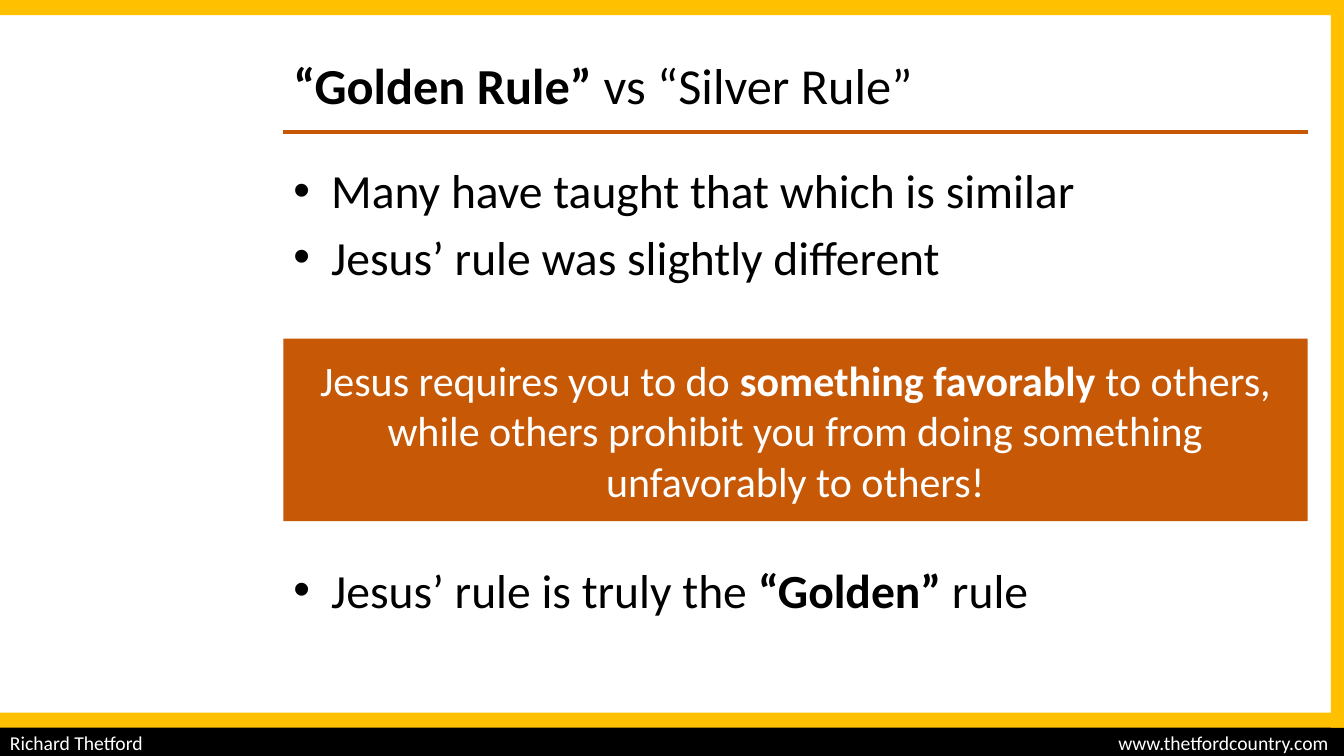
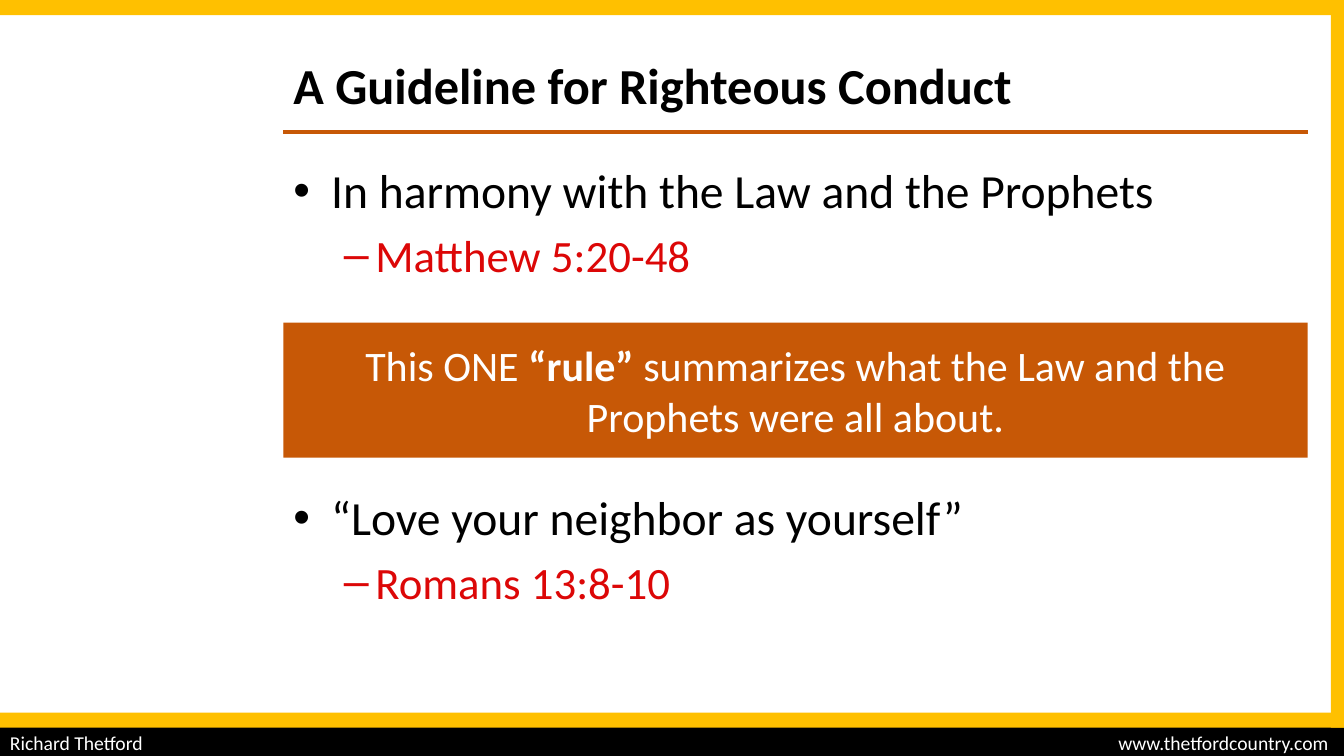
from dataclasses import dataclass

from lxml.etree import SubElement
from pptx import Presentation
from pptx.dml.color import RGBColor
from pptx.enum.shapes import MSO_CONNECTOR, MSO_SHAPE
from pptx.enum.text import MSO_ANCHOR, MSO_AUTO_SIZE, PP_ALIGN
from pptx.oxml.ns import qn
from pptx.shapes.autoshape import Shape
from pptx.slide import Slide, SlideLayout
from pptx.util import Inches, Pt

BLACK = RGBColor(0x00, 0x00, 0x00)
WHITE = RGBColor(0xFF, 0xFF, 0xFF)
GOLD = RGBColor(0xFF, 0xC0, 0x00)
ORANGE = RGBColor(0xC7, 0x58, 0x06)
RED = RGBColor(0xDC, 0x07, 0x07)
FONT = "Calibri"

SLIDE_WIDTH, SLIDE_HEIGHT = 13.33, 7.5
CONTENT_LEFT, CONTENT_WIDTH = 2.81, 10.16
RULE_TOP = 1.31
BAND = 0.15
SIDE_BAND = 0.13
FOOTER_TOP = 7.19
BOTTOM_BAND_TOP = 7.07


@dataclass(frozen=True)
class TextRun:
    text: str
    bold: bool = False


@dataclass(frozen=True)
class Point:
    runs: list[TextRun]
    level: int = 0
    space_before: float | None = None


@dataclass(frozen=True)
class Callout:
    top: float
    height: float
    runs: list[TextRun]


@dataclass(frozen=True)
class Page:
    title: list[TextRun]
    points: list[Point]
    callout: Callout


PAGES = [
    Page(
        title=[TextRun("“Golden Rule”", bold=True), TextRun(" vs “Silver Rule”")],
        points=[
            Point([TextRun("Many have taught that which is similar")], space_before=0),
            Point([TextRun("Jesus’ rule was slightly different")]),
            Point(
                [
                    TextRun("Jesus’ rule is truly the "),
                    TextRun("“Golden” ", bold=True),
                    TextRun("rule"),
                ],
                space_before=197,
            ),
        ],
        callout=Callout(
            3.36,
            1.81,
            [
                TextRun("Jesus requires you to do "),
                TextRun("something favorably ", bold=True),
                TextRun(
                    "to others, while others prohibit you from doing "
                    "something unfavorably to others!"
                ),
            ],
        ),
    ),
    Page(
        title=[TextRun("A Guideline for Righteous Conduct", bold=True)],
        points=[
            Point([TextRun("In harmony with the Law and the Prophets")], space_before=0),
            Point([TextRun("Matthew 5:20-48")], level=1),
            Point([TextRun("“Love your neighbor as yourself”")], space_before=148),
            Point([TextRun("Romans 13:8-10")], level=1),
        ],
        callout=Callout(
            3.2,
            1.34,
            [
                TextRun("This ONE "),
                TextRun("“rule” ", bold=True),
                TextRun("summarizes what the Law and the Prophets were all about."),
            ],
        ),
    ),
]


def write_runs(
    paragraph,
    runs: list[TextRun],
    *,
    size: float,
    color: RGBColor = BLACK,
    align: PP_ALIGN = PP_ALIGN.LEFT,
) -> None:
    paragraph.alignment = align
    for text_run in runs:
        run = paragraph.add_run()
        run.text = text_run.text
        run.font.name = FONT
        run.font.size = Pt(size)
        run.font.bold = text_run.bold
        run.font.color.rgb = color


def add_box(
    slide: Slide, left: float, top: float, width: float, height: float, fill: RGBColor
) -> Shape:
    box = slide.shapes.add_shape(
        MSO_SHAPE.RECTANGLE, Inches(left), Inches(top), Inches(width), Inches(height)
    )
    box.shadow.inherit = False
    box.fill.solid()
    box.fill.fore_color.rgb = fill
    box.line.fill.background()
    box.text_frame.vertical_anchor = MSO_ANCHOR.MIDDLE
    return box


def add_footer(slide: Slide) -> None:
    footer = add_box(
        slide, 0, FOOTER_TOP, SLIDE_WIDTH, SLIDE_HEIGHT - FOOTER_TOP, BLACK
    )
    footer.text_frame.margin_bottom = 0
    paragraph = footer.text_frame.paragraphs[0]
    tab_list = SubElement(paragraph._p.get_or_add_pPr(), qn("a:tabLst"))
    SubElement(tab_list, qn("a:tab"), pos=str(Inches(13.08)), algn="r")
    write_runs(
        paragraph,
        [TextRun("Richard Thetford\twww.thetfordcountry.com")],
        size=14,
        color=WHITE,
    )


def add_frame(slide: Slide) -> None:
    """Draw the gold bands, the footer and the rule under the title."""
    add_footer(slide)
    for top in (0, BOTTOM_BAND_TOP):
        add_box(slide, 0, top, SLIDE_WIDTH, BAND, GOLD)
    add_box(slide, SLIDE_WIDTH - SIDE_BAND, 0, SIDE_BAND, BOTTOM_BAND_TOP + BAND, GOLD)
    rule = slide.shapes.add_connector(
        MSO_CONNECTOR.STRAIGHT,
        Inches(CONTENT_LEFT),
        Inches(RULE_TOP),
        Inches(CONTENT_LEFT + CONTENT_WIDTH),
        Inches(RULE_TOP),
    )
    rule.line.color.rgb = ORANGE
    rule.line.width = Pt(3)
    SubElement(rule._element.spPr, qn("a:effectLst"))


def place_layout(layout: SlideLayout) -> None:
    """Set the title and body areas that every slide inherits."""
    areas = [(0.21, 10.24, 1.26), (1.55, CONTENT_WIDTH, 5.58)]
    for index, (top, width, height) in enumerate(areas):
        placeholder = layout.placeholders[index]
        placeholder.left, placeholder.top = Inches(CONTENT_LEFT), Inches(top)
        placeholder.width, placeholder.height = Inches(width), Inches(height)


def add_page(presentation, layout: SlideLayout, page: Page) -> None:
    slide = presentation.slides.add_slide(layout)
    title_frame = slide.shapes.title.text_frame
    title_frame.auto_size = MSO_AUTO_SIZE.NONE
    title_frame.vertical_anchor = MSO_ANCHOR.MIDDLE
    write_runs(title_frame.paragraphs[0], page.title, size=36)

    body_frame = slide.placeholders[1].text_frame
    body_frame.auto_size = MSO_AUTO_SIZE.NONE
    for index, point in enumerate(page.points):
        paragraph = body_frame.add_paragraph() if index else body_frame.paragraphs[0]
        paragraph.level = point.level
        if point.space_before is not None:
            paragraph.space_before = Pt(point.space_before)
        size, color = (32, RED) if point.level else (34, BLACK)
        write_runs(paragraph, point.runs, size=size, color=color)

    add_frame(slide)
    callout = page.callout
    box = add_box(
        slide, CONTENT_LEFT, callout.top, CONTENT_WIDTH, callout.height, ORANGE
    )
    box.text_frame.word_wrap = True
    write_runs(
        box.text_frame.paragraphs[0],
        callout.runs,
        size=30,
        color=WHITE,
        align=PP_ALIGN.CENTER,
    )


def main() -> None:
    presentation = Presentation()
    presentation.slide_width = Inches(SLIDE_WIDTH)
    presentation.slide_height = Inches(SLIDE_HEIGHT)
    layout = presentation.slide_layouts.get_by_name("Title and Content")
    place_layout(layout)
    for page in PAGES:
        add_page(presentation, layout, page)
    presentation.save("out.pptx")


if __name__ == "__main__":
    main()
